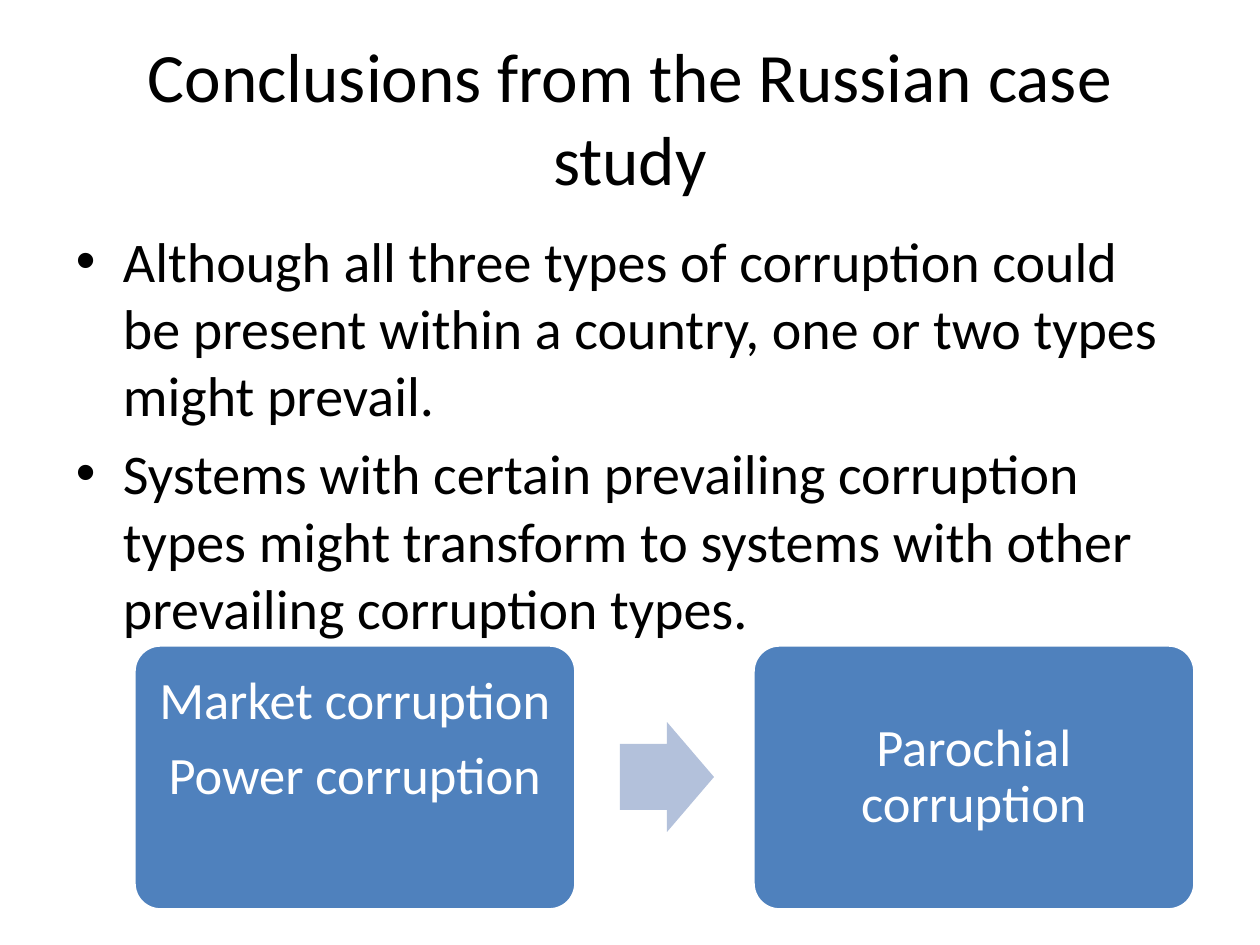
from lxml.etree import SubElement
from pptx import Presentation
from pptx.dml.color import RGBColor
from pptx.enum.shapes import MSO_SHAPE as Shape
from pptx.enum.text import MSO_ANCHOR as Anchor, PP_ALIGN as Align
from pptx.oxml.ns import qn
from pptx.util import Pt

PX = 914400 / 126
BLACK, WHITE, BLUE, PALE_BLUE = "000000", "FFFFFF", "4F81BD", "B3C1DB"


def px(length):
    """Turn a length in px into EMU."""
    return round(length * PX)


def color(value):
    """Turn a hex string into a colour."""
    return RGBColor.from_string(value)


def add_bullet(para, indent):
    """Give a paragraph a round bullet with a hanging indent."""
    props = para._p.get_or_add_pPr()
    props.set("marL", str(px(indent)))
    props.set("indent", str(-px(indent)))
    SubElement(props, qn("a:buFont"), typeface="Arial")
    SubElement(props, qn("a:buChar"), char="•")


def write(frame, lines, size, fill=BLACK, align=Align.LEFT, anchor=Anchor.TOP,
          insets=(13, 6, 13, 6), spacing=None, before=0, after=0, indent=0):
    """Fill a text frame with one paragraph for each line."""
    frame.word_wrap = True
    frame.vertical_anchor = anchor
    (frame.margin_left, frame.margin_top,
     frame.margin_right, frame.margin_bottom) = map(px, insets)
    for index, line in enumerate(lines):
        para = frame.paragraphs[0] if index == 0 else frame.add_paragraph()
        para.alignment = align
        para.line_spacing = spacing
        para.space_before = Pt(before if index else 0)
        para.space_after = Pt(after)
        if indent:
            add_bullet(para, indent)
        span = para.add_run()
        span.text = line
        span.font.name = "Calibri"
        span.font.size = Pt(size)
        span.font.color.rgb = color(fill)


def add_text(page, box, lines, **style):
    """Place a text box on the page."""
    write(page.shapes.add_textbox(*map(px, box)).text_frame, lines, **style)


def add_block(page, kind, box, fill, adjustments, outline=None):
    """Place a filled preset shape on the page."""
    block = page.shapes.add_shape(kind, *map(px, box))
    block.shadow.inherit = False
    block.fill.solid()
    block.fill.fore_color.rgb = color(fill)
    for index, value in enumerate(adjustments):
        block.adjustments[index] = value
    if outline:
        block.line.color.rgb = color(outline)
        block.line.width = Pt(2)
    else:
        block.line.fill.background()
    return block


def add_transition(page, box, stages):
    """Draw two stages at the ends of the box and an arrow between them."""
    left, top, width, height = box
    stage_width, arrow_width, arrow_height = 442, 94, 110
    for index, (lines, bottom) in enumerate(stages):
        stage_left = left + index * (width - stage_width)
        stage = add_block(page, Shape.ROUNDED_RECTANGLE,
                          (stage_left, top, stage_width, height), BLUE, [0.1], WHITE)
        write(stage.text_frame, lines, size=30, fill=WHITE, align=Align.CENTER,
              anchor=Anchor.MIDDLE, insets=(15, 15, 15, bottom), spacing=0.9, after=10.5)
    arrow_left = left + stage_width + 44
    arrow_top = top + (height - arrow_height) // 2
    add_block(page, Shape.RIGHT_ARROW,
              (arrow_left, arrow_top, arrow_width, arrow_height), PALE_BLUE, [0.6, 0.5])


def main():
    """Build the slide and save the deck."""
    deck = Presentation()
    deck.slide_width, deck.slide_height = px(1260), px(945)
    page = deck.slides.add_slide(deck.slide_layouts[6])
    add_text(page, (63, 38, 1134, 157), ["Conclusions from the Russian case study"],
             size=39.6, align=Align.CENTER, anchor=Anchor.MIDDLE)
    add_text(page, (63, 220, 1134, 624), [
        "Although all three types of corruption could be present within a country, "
        "one or two types might prevail.",
        "Systems with certain prevailing corruption types might transform to systems "
        "with other prevailing corruption types.",
    ], size=32, before=6.4, indent=47)
    add_transition(page, (134, 645, 1061, 265), [
        (["Market corruption", "Power corruption"], 90),
        (["Parochial corruption"], 15),
    ])
    deck.save("out.pptx")


if __name__ == "__main__":
    main()
